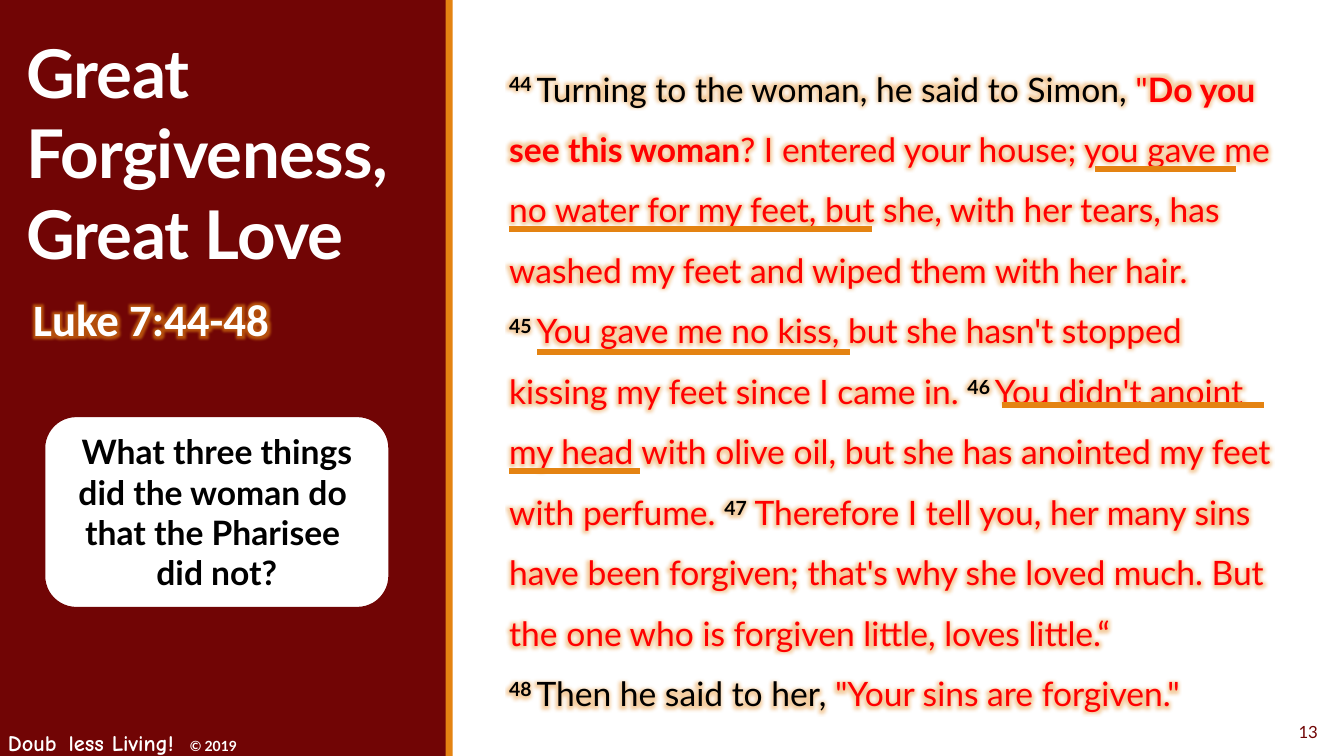
from lxml import etree
from pptx import Presentation
from pptx.dml.color import RGBColor
from pptx.enum.shapes import MSO_CONNECTOR, MSO_SHAPE
from pptx.enum.text import MSO_ANCHOR, PP_ALIGN
from pptx.oxml.ns import qn
from pptx.util import Inches, Pt

STRAIGHT = MSO_CONNECTOR.STRAIGHT
RECTANGLE, ROUNDED = MSO_SHAPE.RECTANGLE, MSO_SHAPE.ROUNDED_RECTANGLE
TOP, MIDDLE = MSO_ANCHOR.TOP, MSO_ANCHOR.MIDDLE
LEFT, CENTER, RIGHT = PP_ALIGN.LEFT, PP_ALIGN.CENTER, PP_ALIGN.RIGHT
MAROON = RGBColor(0x71, 0x05, 0x05)
ORANGE = RGBColor(0xE4, 0x83, 0x12)
WHITE = RGBColor(0xFF, 0xFF, 0xFF)
BLACK = RGBColor(0, 0, 0)
RED = RGBColor(0xFF, 0, 0)

BANDS = [((0, 0, 4.43, 7.5), MAROON), ((4.42, 0, 0.07, 7.5), ORANGE)]

NUMBER = {"color": BLACK, "bold": True, "baseline": 30000}
NARRATION = {"color": BLACK}
SPEECH = {"color": RED}
STRESSED = {"color": RED, "bold": True}
PASSAGE = [
    ("44 ", NUMBER),
    ("Turning to the woman, he said to Simon, ", NARRATION),
    ("\"", SPEECH),
    ("Do you see this woman", STRESSED),
    ("? I entered your house; you gave me no water for my feet, but she, "
     "with her tears, has washed my feet and wiped them with her hair. \n", SPEECH),
    ("45 ", NUMBER),
    ("You gave me no kiss, but she hasn't stopped kissing my feet since I came in. ", SPEECH),
    ("46 ", NUMBER),
    ("You didn't anoint my head with olive oil, but she has anointed my feet "
     "with perfume. ", SPEECH),
    ("47", NUMBER),
    (" Therefore I tell you, her many sins have been forgiven; that's why she "
     "loved much. But the one who is forgiven little, loves little.“ \n", SPEECH),
    ("48 ", NUMBER),
    ("Then he said to her, ", NARRATION),
    ("\"Your sins are forgiven.\"", SPEECH),
]
PASSAGE_STYLE = {"name": "Lato", "size": 24, "glow": (8, 40)}

FOOTER = [
    ("Doub", {"size": 16}),
    (" ", {"size": 24}),
    ("less Living!  ", {"size": 16}),
    ("© 2019", {"size": 10, "name": "Lato"}),
]
FOOTER_STYLE = {"name": "Comic Neue", "color": WHITE, "bold": True}

TITLE = [("Great Forgiveness, Great Love", {})]
TITLE_STYLE = {"name": "Lato", "size": 48, "color": WHITE, "bold": True, "spacing": -50}

REFERENCE = [("Luke 7:44-48", {})]
REFERENCE_STYLE = {"name": "Calibri", "size": 32, "color": WHITE, "bold": True,
                   "glow": (10, 60)}

QUESTION = [("What three things did the woman do \nthat the Pharisee \ndid not?", {})]
QUESTION_STYLE = {"name": "Lato", "size": 24, "color": BLACK, "bold": True}

PAGE = [("13", {})]
PAGE_STYLE = {"name": "Lato", "size": 12, "color": MAROON}

TEXTS = [
    ((-0.02, 7.07, 3.92, 0.5), FOOTER, FOOTER_STYLE, LEFT, TOP),
    ((11.82, 7.06, 1.35, 0.4), PAGE, PAGE_STYLE, RIGHT, MIDDLE),
    ((0.16, 0.26, 4.33, 3.49), TITLE, TITLE_STYLE, LEFT, TOP),
    ((0.23, 2.84, 3.85, 0.64), REFERENCE, REFERENCE_STYLE, LEFT, TOP),
]
UNDERLINES = [
    (5.05, 8.65, 2.27),
    (5.33, 8.43, 3.49),
    (10.86, 12.26, 1.68),
    (9.94, 12.54, 4.02),
    (5.05, 6.35, 4.67),
]


def add_glow(properties, radius, opacity):
    effects = etree.Element(qn("a:effectLst"))
    glow = etree.SubElement(effects, qn("a:glow"), rad=str(Pt(radius)))
    color = etree.SubElement(glow, qn("a:srgbClr"), val=str(ORANGE))
    etree.SubElement(color, qn("a:alpha"), val=str(opacity * 1000))
    properties.find(qn("a:latin")).addprevious(effects)


def style_run(run, style):
    font = run.font
    font.color.rgb = style["color"]
    values = {"name": style["name"], "size": Pt(style["size"]),
              "bold": style.get("bold", False)}
    for attribute, value in values.items():
        setattr(font, attribute, value)
    properties = run._r.get_or_add_rPr()
    for key, attribute in (("baseline", "baseline"), ("spacing", "spc")):
        if key in style:
            properties.set(attribute, str(style[key]))
    if "glow" in style:
        add_glow(properties, *style["glow"])


def write(frame, pieces, base, align=LEFT, anchor=TOP):
    frame.word_wrap = True
    frame.vertical_anchor = anchor
    paragraph = frame.paragraphs[0]
    paragraph.alignment = align
    for text, changes in pieces:
        for index, line in enumerate(text.split("\n")):
            if index:
                paragraph.add_line_break()
            if line:
                run = paragraph.add_run()
                run.text = line
                style_run(run, {**base, **changes})
    return paragraph


def add_panel(slide, kind, place, fill):
    panel = slide.shapes.add_shape(kind, *map(Inches, place))
    panel.shadow.inherit = False
    panel.fill.solid()
    panel.fill.fore_color.rgb = fill
    panel.line.fill.background()
    return panel


def add_underline(slide, start, end, y):
    underline = slide.shapes.add_connector(
        STRAIGHT, *map(Inches, (start, y, end, y)))
    underline.line.color.rgb = ORANGE
    underline.line.width = Pt(4.5)
    etree.SubElement(underline._element.spPr, qn("a:effectLst"))


def main():
    deck = Presentation()
    deck.slide_width, deck.slide_height = Inches(13.33), Inches(7.5)
    slide = deck.slides.add_slide(deck.slide_layouts[6])

    for place, fill in BANDS:
        add_panel(slide, RECTANGLE, place, fill)

    passage = slide.shapes.add_textbox(*map(Inches, (5.05, 0.43, 7.65, 6.77))).text_frame
    passage.margin_left = passage.margin_right = 0
    verses = write(passage, PASSAGE, PASSAGE_STYLE)
    verses.line_spacing = 1.5
    verses.space_after = Pt(2)

    for place, pieces, style, align, anchor in TEXTS:
        box = slide.shapes.add_textbox(*map(Inches, place))
        write(box.text_frame, pieces, style, align, anchor)

    question = add_panel(slide, ROUNDED, (0.44, 4.13, 3.42, 1.9), WHITE)
    question.line.color.rgb = MAROON
    question.line.width = Pt(1.25)
    write(question.text_frame, QUESTION, QUESTION_STYLE, CENTER, MIDDLE)

    for start, end, y in UNDERLINES:
        add_underline(slide, start, end, y)

    deck.save("out.pptx")


if __name__ == "__main__":
    main()
